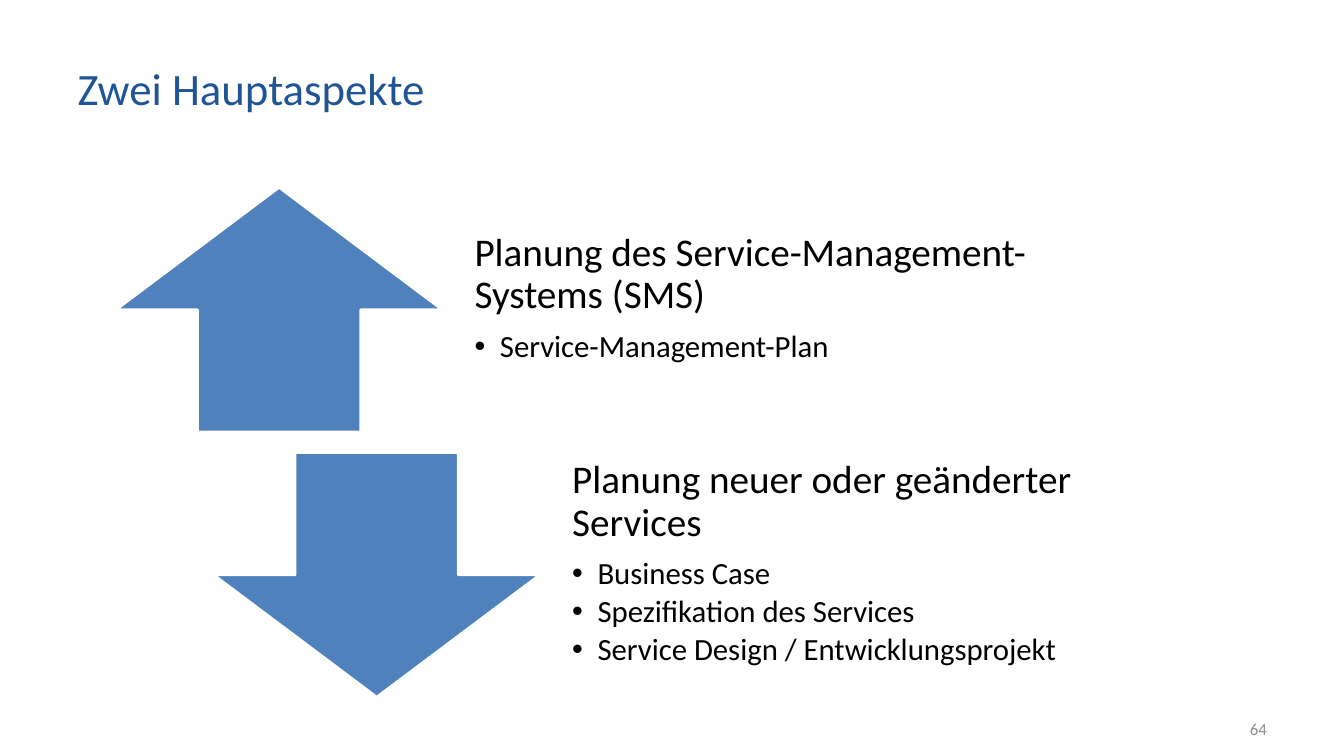
from pptx import Presentation
from pptx.dml.color import RGBColor as Rgb
from pptx.enum.shapes import MSO_SHAPE as Shape
from pptx.enum.text import MSO_ANCHOR as Anchor, PP_ALIGN as Align
from pptx.oxml.ns import qn
from pptx.util import Cm, Pt
from lxml.etree import SubElement as Sub

COLORS = {"title": "205595", "arrow": "4F81BD", "edge": "FFFFFF",
          "text": "000000", "page": "8C8C8C"}

# Top left corner of the first aspect, and the step to the next one
START, STEP = (2.92, 4.72), (2.46, 6.68)
ASPECTS = [
    (Shape.UP_ARROW, "Planung des Service-Management-Systems (SMS)",
     ["Service-Management-Plan"]),
    (Shape.DOWN_ARROW, "Planung neuer oder geänderter Services",
     ["Business Case", "Spezifikation des Services",
      "Service Design / Entwicklungsprojekt"]),
]


def style(item, **values):
    for name, value in values.items():
        setattr(item, name, value)


def write(para, text, size, color, **values):
    para.text = text
    style(para, **values)
    style(para.font, name="Calibri", size=Pt(size))
    para.font.color.rgb = Rgb.from_string(COLORS[color])


def bullet(para):
    props = para._p.get_or_add_pPr()
    props.set("marL", str(Cm(0.64)))
    props.set("indent", str(-Cm(0.64)))
    Sub(props, qn("a:buFont")).set("typeface", "Arial")
    Sub(props, qn("a:buChar")).set("char", "•")


def add_title(slide, left, top, width, height):
    title = slide.shapes.title
    style(title, left=Cm(left), top=Cm(top), width=Cm(width), height=Cm(height))
    style(title.text_frame, vertical_anchor=Anchor.MIDDLE, word_wrap=True)
    write(title.text_frame.paragraphs[0], "Zwei Hauptaspekte", 32, "title",
          alignment=Align.LEFT)


def add_aspect(slide, left, top, kind, head, points):
    height = 6.17
    # Arrow
    arrow = slide.shapes.add_shape(kind, Cm(left), Cm(top), Cm(8.23), Cm(height))
    arrow.shadow.inherit = False
    arrow.fill.solid()
    arrow.fill.fore_color.rgb = Rgb.from_string(COLORS["arrow"])
    arrow.line.color.rgb = Rgb.from_string(COLORS["edge"])
    arrow.line.width = Pt(2)

    # Heading and bullets
    box = slide.shapes.add_textbox(Cm(left + 8.48), Cm(top), Cm(17.07), Cm(height))
    frame = box.text_frame
    style(frame, word_wrap=True, vertical_anchor=Anchor.MIDDLE,
          margin_left=Cm(0.56), margin_top=0,
          margin_right=Cm(0.56), margin_bottom=Cm(0.56))
    write(frame.paragraphs[0], head, 28, "text",
          line_spacing=0.9, space_after=Pt(9.8))
    for point in points:
        para = frame.add_paragraph()
        bullet(para)
        write(para, point, 22, "text", level=1,
              line_spacing=0.9, space_after=Pt(3.3))


def add_page(slide, left, top, width, height):
    box = slide.shapes.add_textbox(Cm(left), Cm(top), Cm(width), Cm(height))
    style(box.text_frame, word_wrap=True, vertical_anchor=Anchor.MIDDLE)
    write(box.text_frame.paragraphs[0], "64", 12, "page", alignment=Align.RIGHT)


def main():
    deck = Presentation()
    style(deck, slide_width=Cm(33.87), slide_height=Cm(19.05))
    slide = deck.slides.add_slide(deck.slide_layouts[5])
    add_title(slide, 1.7, 0.76, 25.17, 2.92)
    for i, aspect in enumerate(ASPECTS):
        left, top = (a + i * b for a, b in zip(START, STEP))
        add_aspect(slide, left, top, *aspect)
    add_page(slide, 24.28, 17.86, 7.9, 1.02)
    deck.save("out.pptx")


if __name__ == "__main__":
    main()
